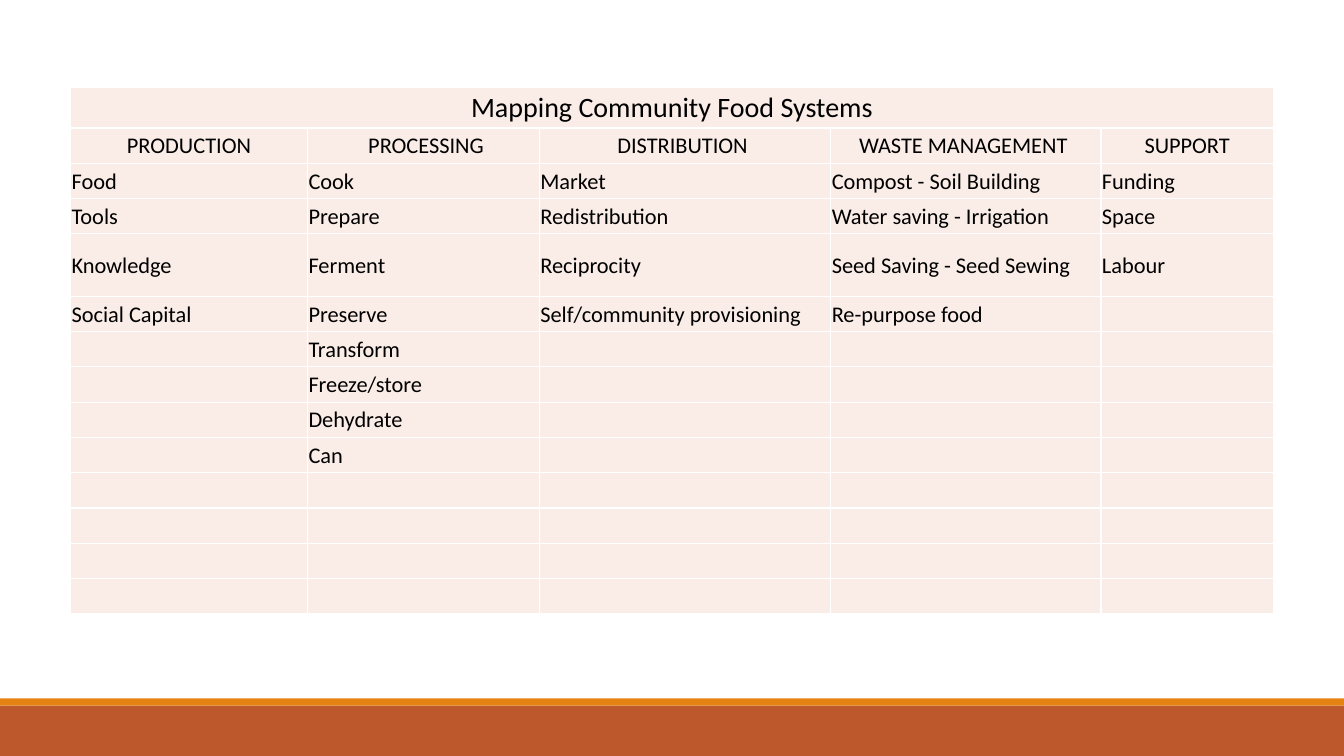
"""Build a slide with a table that maps community food systems."""
from lxml.etree import SubElement
from pptx import Presentation
from pptx.dml.color import RGBColor
from pptx.enum.shapes import MSO_SHAPE
from pptx.enum.text import MSO_ANCHOR, PP_ALIGN
from pptx.oxml.ns import qn
from pptx.util import Inches, Pt

COLORS = {
    "rust": "BD582C",
    "orange": "E48312",
    "cell": "FAEDE7",
    "border": "FFFFFF",
    "text": "000000",
}
TITLE = "Mapping Community Food Systems"
FOOD_SYSTEM = {
    "PRODUCTION": ["Food", "Tools", "Knowledge", "Social Capital"],
    " PROCESSING": ["Cook", "Prepare", "Ferment", "Preserve", "Transform",
                    "Freeze/store", "Dehydrate", "Can"],
    "DISTRIBUTION ": ["Market", "Redistribution", "Reciprocity",
                      "Self/community provisioning"],
    "WASTE MANAGEMENT ": ["Compost - Soil Building", "Water saving - Irrigation",
                          "Seed Saving - Seed Sewing", "Re-purpose food"],
    "SUPPORT": ["Funding", "Space", "Labour"],
}
COLUMN_WIDTHS = [2.35, 2.3, 2.89, 2.68, 1.71]
ROW_HEIGHTS = [0.4] + [0.35] * 3 + [0.62] + [0.35] * 9


def style_cell(cell):
    """Give a cell its borders, fill, margins and anchor."""
    properties = cell._tc.get_or_add_tcPr()
    for side in ("a:lnL", "a:lnR", "a:lnT", "a:lnB"):
        line = SubElement(properties, qn(side), w=str(Pt(1)))
        line_fill = SubElement(line, qn("a:solidFill"))
        SubElement(line_fill, qn("a:srgbClr"), val=COLORS["border"])
    cell.fill.solid()
    cell.fill.fore_color.rgb = RGBColor.from_string(COLORS["cell"])
    cell.margin_left = cell.margin_right = cell.margin_top = Inches(0.01)
    cell.margin_bottom = 0
    cell.vertical_anchor = MSO_ANCHOR.MIDDLE


def write_cell(cell, text, size, alignment):
    """Write one run of text into a cell."""
    paragraph = cell.text_frame.paragraphs[0]
    paragraph.alignment = alignment
    run = paragraph.add_run()
    run.text = text
    run.font.name = "Calibri"
    run.font.size = Pt(size)
    run.font.color.rgb = RGBColor.from_string(COLORS["text"])


presentation = Presentation()
presentation.slide_width = Inches(13.33)
presentation.slide_height = Inches(7.5)
slide = presentation.slides.add_slide(presentation.slide_layouts[6])

for top, height, color in [(7, 0.5, "rust"), (6.93, 0.07, "orange")]:
    band = slide.shapes.add_shape(
        MSO_SHAPE.RECTANGLE, 0, Inches(top), presentation.slide_width, Inches(height))
    band.shadow.inherit = False
    band.fill.solid()
    band.fill.fore_color.rgb = RGBColor.from_string(COLORS[color])
    band.line.fill.background()

table = slide.shapes.add_table(
    len(ROW_HEIGHTS), len(COLUMN_WIDTHS), Inches(0.7), Inches(0.87),
    Inches(sum(COLUMN_WIDTHS)), Inches(sum(ROW_HEIGHTS))).table
table.first_row = False
table.horz_banding = False
for column, width in zip(table.columns, COLUMN_WIDTHS):
    column.width = Inches(width)
for row, height in zip(table.rows, ROW_HEIGHTS):
    row.height = Inches(height)
for cell in table.iter_cells():
    style_cell(cell)

table.cell(0, 0).merge(table.cell(0, len(COLUMN_WIDTHS) - 1))
write_cell(table.cell(0, 0), TITLE, 20, PP_ALIGN.CENTER)
for column_index, (heading, entries) in enumerate(FOOD_SYSTEM.items()):
    write_cell(table.cell(1, column_index), heading, 16, PP_ALIGN.CENTER)
    for row_index, entry in enumerate(entries, start=2):
        write_cell(table.cell(row_index, column_index), entry, 16, PP_ALIGN.LEFT)

presentation.save("out.pptx")
